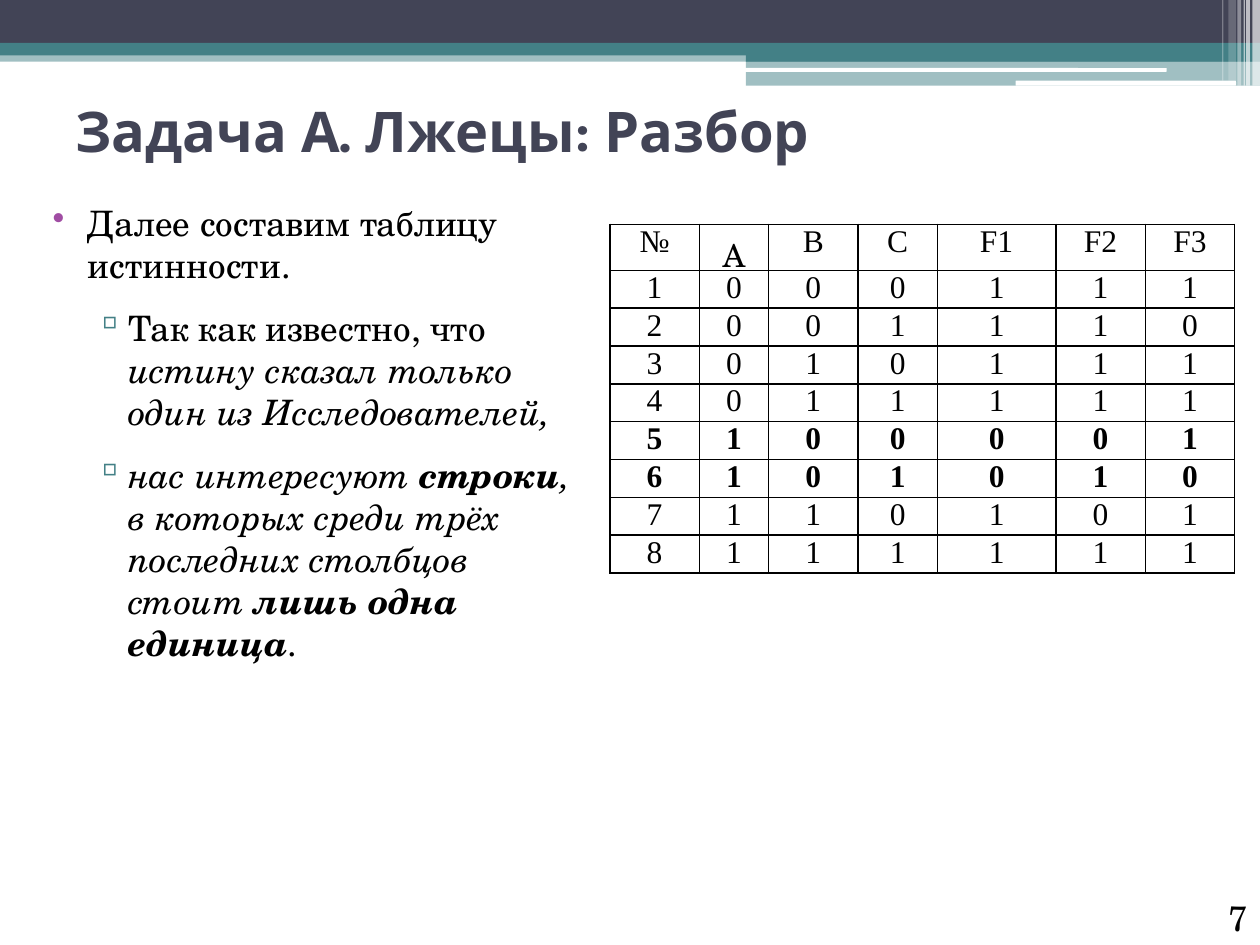
"""Builds the truth-table slide of the liars problem."""
from lxml.etree import SubElement
from pptx import Presentation
from pptx.dml.color import RGBColor as RGB
from pptx.enum.shapes import MSO_SHAPE as SHAPE
from pptx.enum.text import MSO_ANCHOR as ANCHOR, PP_ALIGN as ALIGN
from pptx.oxml.ns import qn
from pptx.util import Inches, Pt

COLORS = {"ink": "000000", "paper": "FFFFFF", "navy": "424456",
          "teal": "438086", "violet": "A04DA3"}
SERIF, SANS, TIMES = "TeX Gyre Schola", "Karla", "Times New Roman"


def add_text(p, text, font=SERIF, size=20, color="ink", bold=False, italic=False):
    for i, line in enumerate(text.split("\n")):
        if i:
            p.add_line_break()
        r = p.add_run()
        r.text = line
        f = r.font
        f.name, f.size, f.bold, f.italic = font, Pt(size), bold, italic
        f.color.rgb = RGB.from_string(COLORS[color])


class Deck:
    CELL = 0.1
    LEVELS = [("•", "violet", 0.4, -0.28), ("▫", "teal", 0.72, -0.27)]

    def __init__(self, cols, rows):
        self.prs = Presentation()
        self.prs.slide_width, self.prs.slide_height = self.grid(cols, rows)
        self.s = self.prs.slides.add_slide(self.prs.slide_layouts[6])

    def grid(self, *cells):
        return [Inches(c * self.CELL) for c in cells]

    def bar(self, box, color, alpha=100, rounded=False):
        kind = SHAPE.ROUNDED_RECTANGLE if rounded else SHAPE.RECTANGLE
        sp = self.s.shapes.add_shape(kind, *self.grid(*box))
        sp.shadow.inherit = False
        sp.fill.solid()
        sp.fill.fore_color.rgb = RGB.from_string(COLORS[color])
        sp.line.fill.background()
        if alpha < 100:
            clr = next(sp.element.spPr.iter(qn("a:srgbClr")))
            SubElement(clr, qn("a:alpha"), val=str(alpha * 1000))

    def frame(self, box, anchor=ANCHOR.TOP):
        tf = self.s.shapes.add_textbox(*self.grid(*box)).text_frame
        tf.word_wrap, tf.vertical_anchor = True, anchor
        return tf

    def label(self, box, text, anchor, align=ALIGN.LEFT, **fmt):
        p = self.frame(box, anchor).paragraphs[0]
        p.alignment = align
        add_text(p, text, **fmt)

    def bullets(self, box, items):
        tf = self.frame(box)
        for i, (level, runs) in enumerate(items):
            p = tf.add_paragraph() if i else tf.paragraphs[0]
            p.level, p.space_before, p.space_after = level, Pt(6), Pt(6)
            char, color, left, hang = self.LEVELS[level]
            pPr = p._p.get_or_add_pPr()
            pPr.set("marL", str(Inches(left)))
            pPr.set("indent", str(Inches(hang)))
            clr = SubElement(pPr, qn("a:buClr"))
            SubElement(clr, qn("a:srgbClr"), val=COLORS[color])
            SubElement(pPr, qn("a:buChar"), char=char)
            for text, fmt in runs:
                add_text(p, text, **fmt)

    def borders(self, cell):
        tcPr = cell._tc.get_or_add_tcPr()
        for side in "LRTB":
            ln = SubElement(tcPr, qn(f"a:ln{side}"), w=str(Pt(1)))
            fill = SubElement(ln, qn("a:solidFill"))
            SubElement(fill, qn("a:srgbClr"), val=COLORS["ink"])

    def table(self, left, top, widths, heights, data, bold_rows):
        box = self.grid(left, top, sum(widths), sum(heights))
        tbl = self.s.shapes.add_table(len(data), len(widths), *box).table
        tbl.first_row = tbl.horz_banding = False
        for col, width in zip(tbl.columns, self.grid(*widths)):
            col.width = width
        for row, height in zip(tbl.rows, self.grid(*heights)):
            row.height = height
        for i, values in enumerate(data):
            for j, value in enumerate(values):
                cell = tbl.cell(i, j)
                lowered = value == "A"
                cell.margin_left = cell.margin_right = Inches(0.07)
                cell.margin_top = Inches(0.06 if lowered else 0)
                cell.margin_bottom = 0
                self.borders(cell)
                cell.fill.background()
                p = cell.text_frame.paragraphs[0]
                p.alignment = ALIGN.CENTER
                add_text(p, value, font=SERIF if lowered else TIMES,
                         size=18, bold=i in bold_rows)


def main():
    deck = Deck(100, 75)
    for box, color, alpha in [
        ((0, 4, 100, 0.9), "teal", 50),
        ((0, 0, 100, 3.4), "navy", 100),
        ((0, 3.4, 100, 1), "teal", 100),
        ((59.2, 3.9, 40.8, 1), "teal", 100),
        ((59.2, 4.8, 40.8, 2), "teal", 50),
    ]:
        deck.bar(box, color, alpha)
    for box in [(59.1, 5.4, 33.5, 0.3), (80.6, 6.4, 17.5, 0.4)]:
        deck.bar(box, "paper", rounded=True)
    for x, width, height, alpha in [
        (99.4, 0.6, 6.8, 65), (98.9, 0.3, 6.8, 65), (98.7, 0.1, 6.8, 60),
        (98.2, 0.3, 6.8, 40), (97.5, 0.6, 6.4, 20), (97, 0.1, 6.4, 30),
    ]:
        deck.bar((x, 0, width, height), "paper", alpha)

    deck.label((5, 6.8, 90, 7.1), "Задача А. Лжецы: Разбор", ANCHOR.MIDDLE,
               font=SANS, size=32, color="navy", bold=True)

    slanted = {"italic": True}
    strong = {"italic": True, "bold": True}
    deck.bullets((2, 15.5, 45.7, 56.4), [
        (0, [("Далее составим таблицу истинности.", {})]),
        (1, [("Так как известно, что ", {}),
             ("истину сказал только один из Исследователей,", slanted)]),
        (1, [("нас интересуют ", slanted), ("строки", strong),
             (", \nв которых среди трёх последних столбцов стоит ", slanted),
             ("лишь одна единица", strong), (".", {})]),
    ])
    deck.label((91.7, 71, 8.3, 4), "7", ANCHOR.BOTTOM, ALIGN.RIGHT)

    values = ["000111", "001110", "010111", "011111",
              "100001", "101010", "110101", "111111"]
    data = [["№", "A", "B", "C", "F1", "F2", "F3"]]
    data += [[str(n), *bits] for n, bits in enumerate(values, 1)]
    deck.table(48.4, 17.8, [7.1, 5.5, 7.1, 6.3, 9.4, 7.1, 7.1],
               [3.65] + [2.78] * len(values), data, bold_rows=(5, 6))
    deck.prs.save("out.pptx")


if __name__ == "__main__":
    main()
